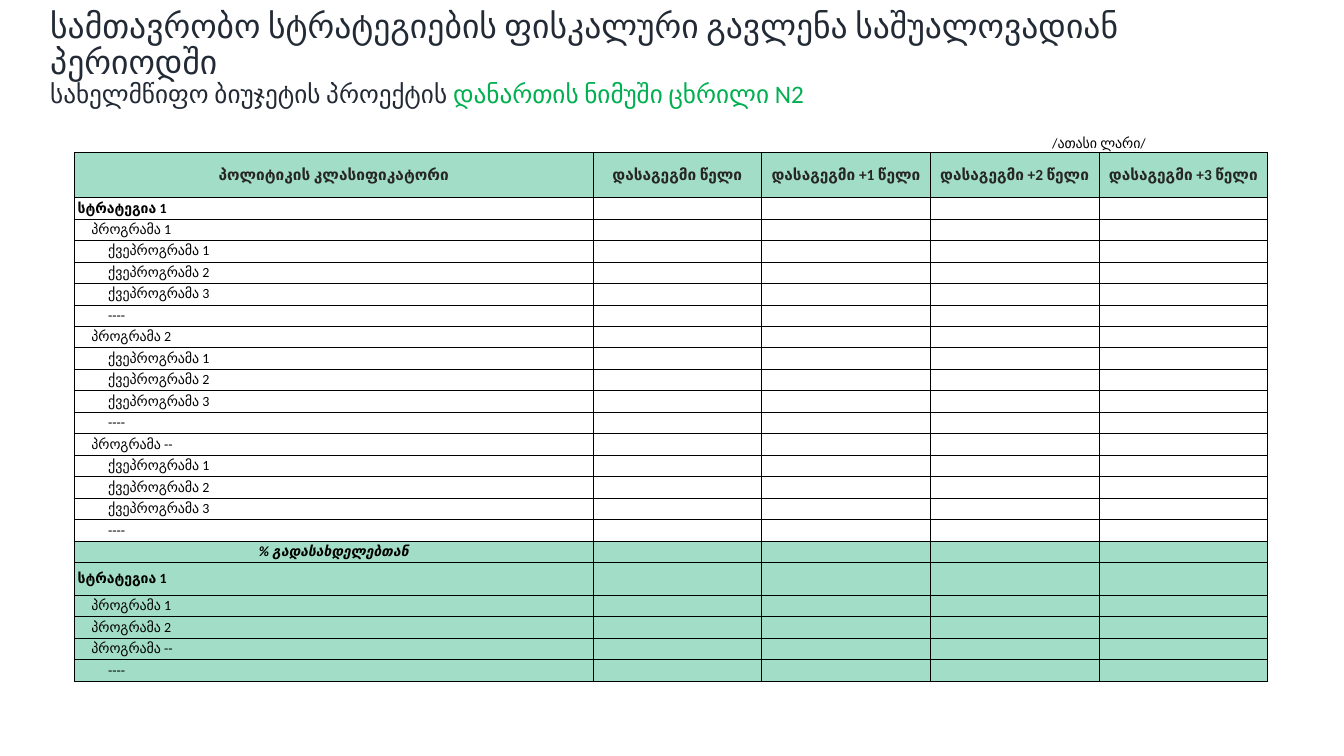
from lxml.etree import SubElement
from pptx import Presentation
from pptx.dml.color import RGBColor
from pptx.enum.text import MSO_ANCHOR, PP_ALIGN
from pptx.oxml.ns import qn
from pptx.util import Pt

SCALE = 3048  # EMU in one px, 300 px to the inch
INK = RGBColor(0x22, 0x2A, 0x35)
LEAF = RGBColor(0x00, 0xB0, 0x50)
MINT = RGBColor(0xA2, 0xDE, 0xC7)
COAL = RGBColor(0x26, 0x26, 0x26)
BLACK = RGBColor(0x00, 0x00, 0x00)
PLAIN = "{2D5ABB26-0587-4C30-8999-92F81FD0307C}"  # no style, no grid

# Table rows: label and outline level
SUBS = [(f"ქვეპროგრამა {n}", 2) for n in (1, 2, 3)] + [("----", 2)]
PLANS = [(f"პროგრამა {n}", 1) for n in ("1", "2", "--")]
HEAD = [(" სტრატეგია 1", 0)]
COSTS = HEAD + [row for plan in PLANS for row in [plan] + SUBS]
SHARES = HEAD + PLANS + SUBS[-1:]
YEARS = ["დასაგეგმი" + step + " წელი" for step in ("", " +1", " +2", " +3")]


class Board:
    def __init__(self, deck, font="Calibri"):
        self.slide = deck.slides.add_slide(deck.slide_layouts[6])
        self.font = font

    def style(self, font, size, color, bold=False, italic=False):
        font.name, font.size = self.font, Pt(size)
        font.bold, font.italic = bold, italic
        font.color.rgb = color

    def title(self, box, parts):
        shape = self.slide.shapes.add_textbox(*(n * SCALE for n in box))
        frame = shape.text_frame
        frame.word_wrap = True
        frame.vertical_anchor = MSO_ANCHOR.MIDDLE
        para = frame.paragraphs[0]
        para.line_spacing = 0.9
        for text, size, color, wrap in parts:
            run = para.add_run()
            run.text = text
            self.style(run.font, size, color)
            if wrap:
                para.add_line_break()

    def table(self, left, top, cols, rows):
        frame = self.slide.shapes.add_table(
            len(rows), len(cols), left * SCALE, top * SCALE,
            sum(cols) * SCALE, sum(rows) * SCALE)
        table = frame.table
        table.first_row = table.horz_banding = False
        frame._element.find(".//" + qn("a:tableStyleId")).text = PLAIN
        for part, size in zip(table.columns, cols):
            part.width = size * SCALE
        for part, size in zip(table.rows, rows):
            part.height = size * SCALE
        return table

    def border(self, cell, sides):
        props = cell._tc.get_or_add_tcPr()
        for side in sides:
            line = SubElement(props, qn("a:ln" + side), w=str(Pt(0.5)))
            fill = SubElement(line, qn("a:solidFill"))
            SubElement(fill, qn("a:srgbClr"), val=str(BLACK))

    def cell(self, cell, text="", fill=None, sides="LRTB", indent=0, size=10,
             color=BLACK, bold=False, italic=False, center=False,
             anchor=MSO_ANCHOR.MIDDLE):
        self.border(cell, sides)
        if fill:
            cell.fill.solid()
            cell.fill.fore_color.rgb = fill
        else:
            cell.fill.background()
        cell.margin_left = indent * SCALE
        cell.margin_right = cell.margin_top = cell.margin_bottom = 0
        cell.vertical_anchor = anchor
        para = cell.text_frame.paragraphs[0]
        para.alignment = PP_ALIGN.CENTER if center else PP_ALIGN.LEFT
        self.style(para.font, size, color, bold, italic)
        if text:
            para.add_run().text = text
        else:
            # An empty cell takes its height from the end mark
            SubElement(para._p, qn("a:endParaRPr"), sz=str(size * 100))


def main():
    deck = Presentation()
    deck.slide_width, deck.slide_height = 4000 * SCALE, 2250 * SCALE
    board = Board(deck)

    # Title
    board.title((120, 66, 3654, 219), [
        ("სამთავრობო სტრატეგიების ფისკალური გავლენა საშუალოვადიან პერიოდში",
         24, INK, True),
        ("სახელმწიფო ბიუჯეტის პროექტის ", 18, INK, False),
        ("დანართის ნიმუში ცხრილი N2", 18, LEAF, False)])

    # Table grid
    low, head, tall = 64, 134, 97
    rows = ([low, head] + [low] * (len(COSTS) + 1)
            + [tall] + [low] * (len(SHARES) - 1))
    table = board.table(222, 390, [1543] + [502] * 4, rows)

    # Unit row
    table.cell(0, 3).merge(table.cell(0, 4))
    for col in range(5):
        board.cell(table.cell(0, col), "/ათასი ლარი/" if col == 3 else "",
                   sides="B", center=True, anchor=MSO_ANCHOR.BOTTOM)

    # Header row
    for col, text in enumerate(["პოლიტიკის კლასიფიკატორი"] + YEARS):
        board.cell(table.cell(1, col), text, MINT, size=11, color=COAL,
                   bold=True, center=True)

    # Costs, then the shares band
    band = len(COSTS) + 2
    body = COSTS + [("% გადასახდელებთან", None)] + SHARES
    for row, (text, level) in enumerate(body, 2):
        fill = MINT if row >= band else None
        mid = level is None
        board.cell(table.cell(row, 0), text, fill, indent=(level or 0) * 50,
                   bold=not level, italic=mid, center=mid)
        for col in range(1, 5):
            board.cell(table.cell(row, col), fill=fill)

    deck.save("out.pptx")


if __name__ == "__main__":
    main()
